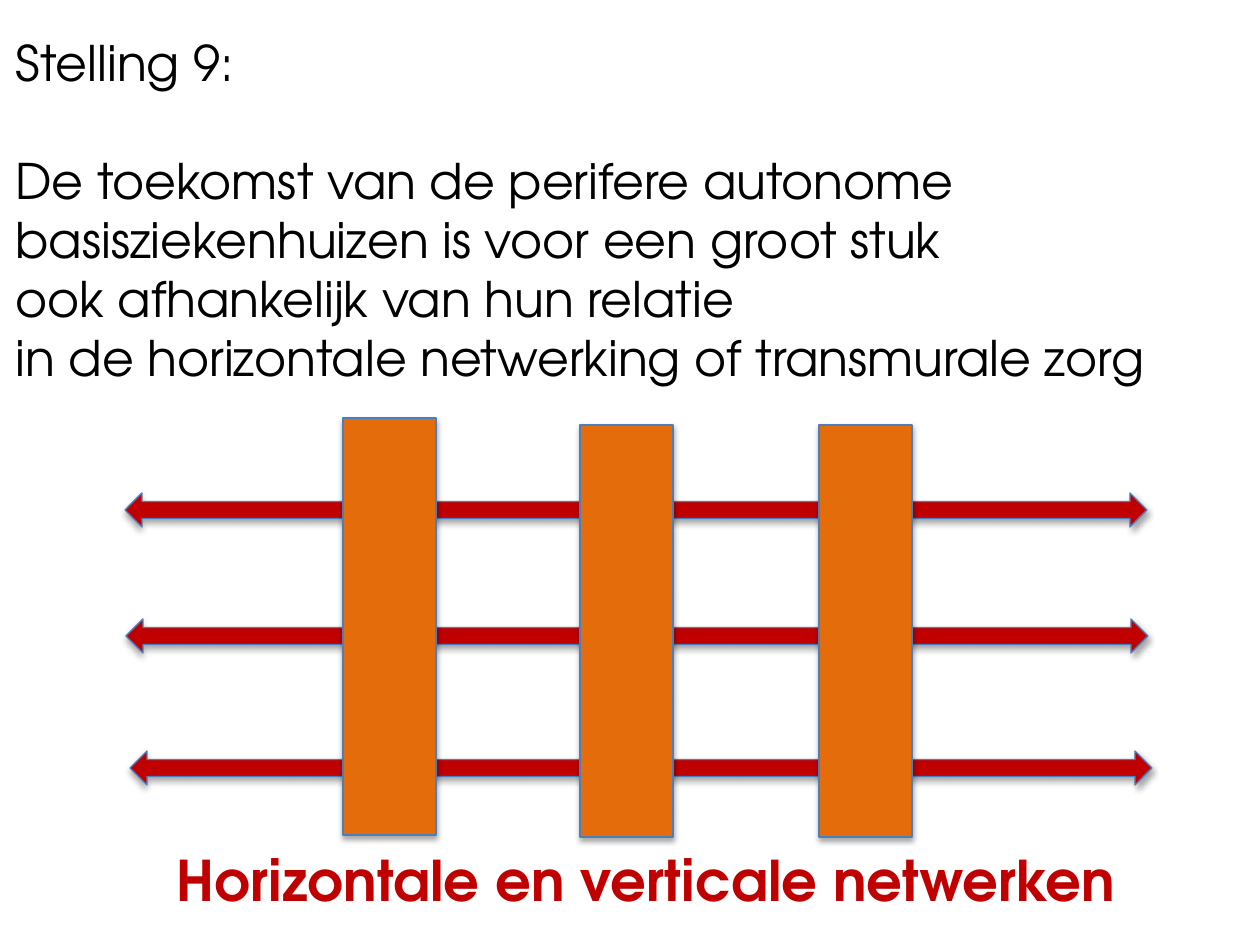
from dataclasses import dataclass

from pptx import Presentation
from pptx.dml.color import RGBColor
from pptx.enum.shapes import MSO_SHAPE
from pptx.enum.text import MSO_ANCHOR, MSO_AUTO_SIZE, PP_ALIGN
from pptx.util import Pt

PX = 914400 / 126


def px(n):
    """Turn pixels into EMU."""
    return round(n * PX)


@dataclass(frozen=True)
class Theme:
    font: str = "TeX Gyre Adventor"
    text: RGBColor = RGBColor(0x00, 0x00, 0x00)
    red: RGBColor = RGBColor(0xC0, 0x00, 0x00)
    orange: RGBColor = RGBColor(0xE4, 0x6C, 0x0A)
    outline: RGBColor = RGBColor(0x4B, 0x7E, 0xBC)
    title_size: int = 28
    caption_size: int = 32
    title_gap: int = 34
    outline_width: float = 0.75


class SlideBuilder:
    """Holds the theme and the slide being drawn."""

    def __init__(self, slide, theme):
        self.s = slide
        self.theme = theme

    def _write(self, sp, lines, size, color, bold, align):
        tf = sp.text_frame
        tf.text = "\n".join(lines)
        tf.word_wrap = True
        tf.auto_size = MSO_AUTO_SIZE.NONE
        tf.vertical_anchor = MSO_ANCHOR.TOP
        for p in tf.paragraphs:
            p.alignment = align
            for r in p.runs:
                r.font.name = self.theme.font
                r.font.size = Pt(size)
                r.font.bold = bold
                r.font.color.rgb = color
        return tf

    def title(self, heading, lines, x, y, w, h):
        sp = self.s.shapes.title
        sp.left, sp.top, sp.width, sp.height = map(px, (x, y, w, h))
        tf = self._write(sp, [heading, *lines], self.theme.title_size,
                         self.theme.text, False, PP_ALIGN.LEFT)
        tf.paragraphs[1].space_before = Pt(self.theme.title_gap)

    def caption(self, text, x, y, w, h):
        sp = self.s.shapes.add_textbox(*map(px, (x, y, w, h)))
        self._write(sp, [text], self.theme.caption_size,
                    self.theme.red, True, PP_ALIGN.CENTER)

    def _shape(self, kind, fill, x, y, w, h):
        """Add an outlined shape that keeps the soft shadow of the template."""
        sp = self.s.shapes.add_shape(kind, *map(px, (x, y, w, h)))
        sp.fill.solid()
        sp.fill.fore_color.rgb = fill
        sp.line.color.rgb = self.theme.outline
        sp.line.width = Pt(self.theme.outline_width)

    def arrow(self, x, y, w, h):
        self._shape(MSO_SHAPE.LEFT_RIGHT_ARROW, self.theme.red, x, y, w, h)

    def pillar(self, x, y, w, h):
        self._shape(MSO_SHAPE.RECTANGLE, self.theme.orange, x, y, w, h)


def main():
    prs = Presentation()
    prs.slide_width, prs.slide_height = px(1260), px(945)
    title_only = prs.slide_layouts[5]
    b = SlideBuilder(prs.slides.add_slide(title_only), Theme())

    b.title("Stelling 9:", [
        "De toekomst van de perifere autonome",
        "basisziekenhuizen is voor een groot stuk",
        "ook afhankelijk van hun relatie",
        "in de horizontale netwerking of transmurale zorg",
    ], 3, 26, 1200, 428)
    b.caption("Horizontale en verticale netwerken", 58, 839, 1177, 81)

    for x, y in ((125, 493), (126, 619), (130, 751)):
        b.arrow(x, y, 1022, 34)
    for x, y, h in ((343, 418, 417), (580, 425, 412), (819, 425, 412)):
        b.pillar(x, y, 93, h)

    prs.save("out.pptx")


if __name__ == "__main__":
    main()
